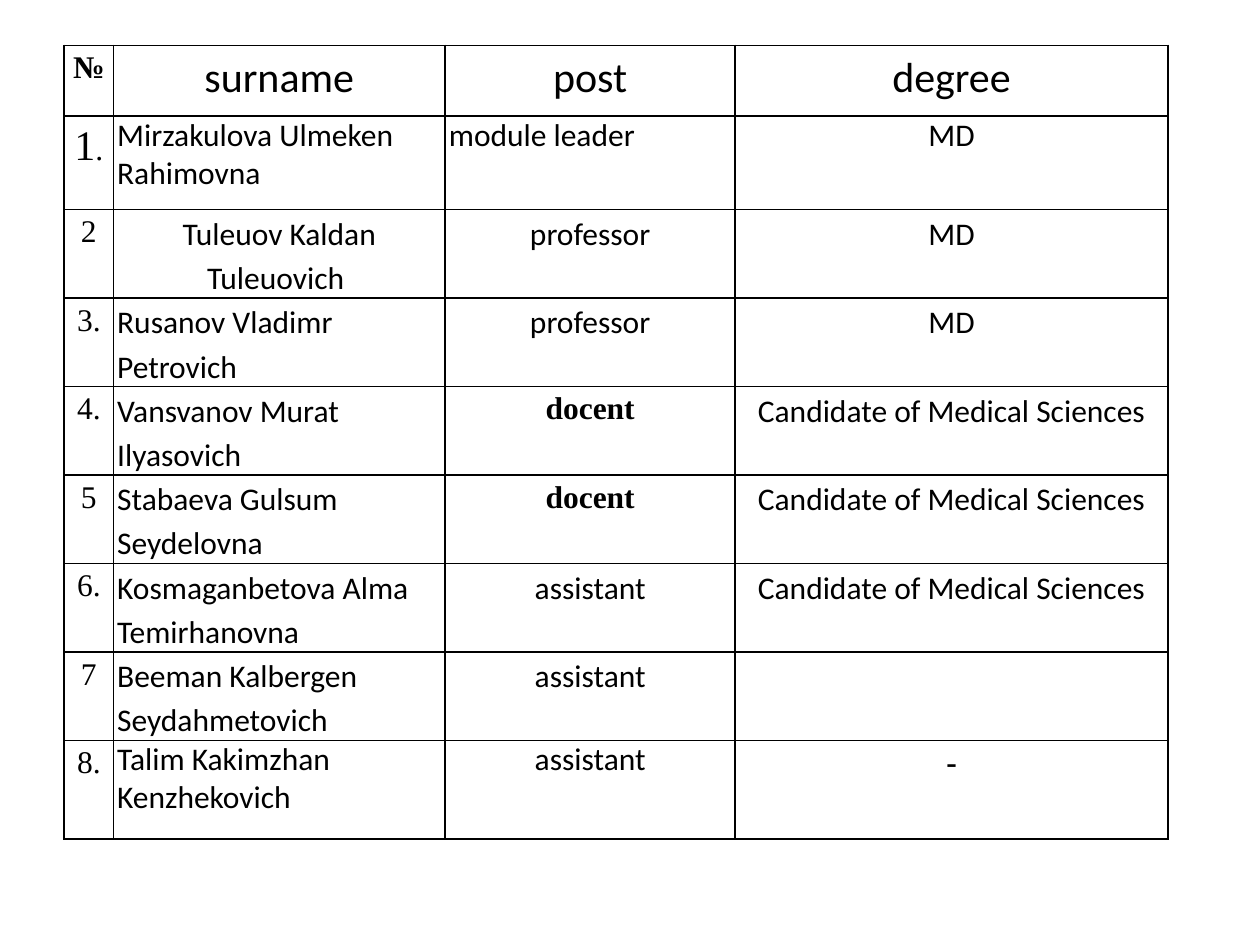
import dataclasses

import pptx
import pptx.dml.color
import pptx.enum.text
import pptx.oxml
import pptx.oxml.ns
import pptx.util

ALIGN = pptx.enum.text.PP_ALIGN
SLIDE_WIDTH, SLIDE_HEIGHT = pptx.util.Inches(10), pptx.util.Inches(7.5)


@dataclasses.dataclass(frozen=True)
class Theme:
    ink: str = "000000"
    sans: str = "Calibri"
    serif: str = "Times New Roman"
    heading_size: int = 24
    body_size: int = 18
    border_width: int = 1
    side_inset: float = 0.03
    loose: float = 1.15


THEME = Theme()

# Shares of the table's box
COLUMN_SHARES = (0.39, 2.63, 2.3, 3.43)
ROW_SHARES = (0.56, 0.74, 0.7, 0.7, 0.7, 0.7, 0.7, 0.7, 0.78)

HEADINGS = ("№", "surname", "post", "degree")
STAFF = (
    ("1.", "Mirzakulova Ulmeken Rahimovna", "module leader", "MD"),
    ("2", "Tuleuov Kaldan Tuleuovich ", "professor", "MD"),
    ("3.", "Rusanov Vladimr Petrovich", "professor", "MD"),
    ("4.", "Vansvanov Murat Ilyasovich", "docent", "Candidate of Medical Sciences"),
    ("5", "Stabaeva Gulsum Seydelovna", "docent", "Candidate of Medical Sciences"),
    ("6.", "Kosmaganbetova Alma Temirhanovna", "assistant", "Candidate of Medical Sciences"),
    ("7", "Beeman Kalbergen Seydahmetovich", "assistant", ""),
    ("8.", "Talim Kakimzhan Kenzhekovich", "assistant", "-"),
)

SERIF = {"name": THEME.serif}
SERIF_BOLD = {"name": THEME.serif, "bold": True}
HEADING = {"size": pptx.util.Pt(THEME.heading_size)}
LEFT = {"alignment": ALIGN.LEFT}
SINGLE = {"line_spacing": 1.0}

# Departures from the usual look, by (row, column)
FONT_EXCEPTIONS = {
    (0, 0): SERIF_BOLD,
    **{(0, column): HEADING for column in (1, 2, 3)},
    **{(row, 0): SERIF for row in range(1, 9)},
    (4, 2): SERIF_BOLD,
    (5, 2): SERIF_BOLD,
    (8, 3): SERIF_BOLD,
}
PARAGRAPH_EXCEPTIONS = {
    **{(row, 1): LEFT for row in (3, 4, 5, 6, 7)},
    (1, 1): LEFT | SINGLE,
    (1, 2): LEFT | SINGLE,
    (1, 3): SINGLE,
    (8, 1): LEFT | SINGLE,
    (8, 2): SINGLE,
}


def set_all(target, values):
    for attribute, value in values.items():
        setattr(target, attribute, value)


def add_run(paragraph, text, font_values):
    run = paragraph.add_run()
    run.text = text
    usual = {"name": THEME.sans, "size": pptx.util.Pt(THEME.body_size), "bold": False}
    set_all(run.font, usual | font_values)
    run.font.color.rgb = pptx.dml.color.RGBColor.from_string(THEME.ink)


def add_borders(cell):
    """Rule all four sides; the lines must come before the cell's fill."""
    properties = cell._tc.get_or_add_tcPr()
    for index, side in enumerate(("lnL", "lnR", "lnT", "lnB")):
        properties.insert(index, pptx.oxml.parse_xml(
            f'<a:{side} {pptx.oxml.ns.nsdecls("a")} w="{pptx.util.Pt(THEME.border_width)}">'
            f'<a:solidFill><a:srgbClr val="{THEME.ink}"/></a:solidFill></a:{side}>'))


def fill_cell(cell, place, text):
    inset = pptx.util.Inches(THEME.side_inset)
    set_all(cell, {"margin_left": inset, "margin_right": inset,
                   "margin_top": 0, "margin_bottom": 0})
    cell.fill.background()
    add_borders(cell)
    paragraph = cell.text_frame.paragraphs[0]
    usual = {"alignment": ALIGN.CENTER, "line_spacing": THEME.loose}
    set_all(paragraph, usual | PARAGRAPH_EXCEPTIONS.get(place, {}))
    font_values = FONT_EXCEPTIONS.get(place, {})
    if place == (1, 0):  # the first number has a large digit and a small dot
        add_run(paragraph, text[0], font_values | HEADING)
        text = text[1:]
    if text:
        add_run(paragraph, text, font_values)


def add_staff_table(slide, left, top, width, height):
    records = (HEADINGS, *STAFF)
    table = slide.shapes.add_table(
        len(records), len(HEADINGS), left, top, width, height).table
    set_all(table, {"first_row": False, "horz_banding": False})
    for column, share in zip(table.columns, COLUMN_SHARES):
        column.width = round(width * share / sum(COLUMN_SHARES))
    for row, share in zip(table.rows, ROW_SHARES):
        row.height = round(height * share / sum(ROW_SHARES))
    for row, record in enumerate(records):
        for column, text in enumerate(record):
            fill_cell(table.cell(row, column), (row, column), text)


def main():
    deck = pptx.Presentation()
    set_all(deck, {"slide_width": SLIDE_WIDTH, "slide_height": SLIDE_HEIGHT})
    slide = deck.slides.add_slide(deck.slide_layouts[6])
    add_staff_table(slide, round(SLIDE_WIDTH * 0.051), round(SLIDE_HEIGHT * 0.048),
                    round(SLIDE_WIDTH * 0.876), round(SLIDE_HEIGHT * 0.84))
    deck.save("out.pptx")


if __name__ == "__main__":
    main()
